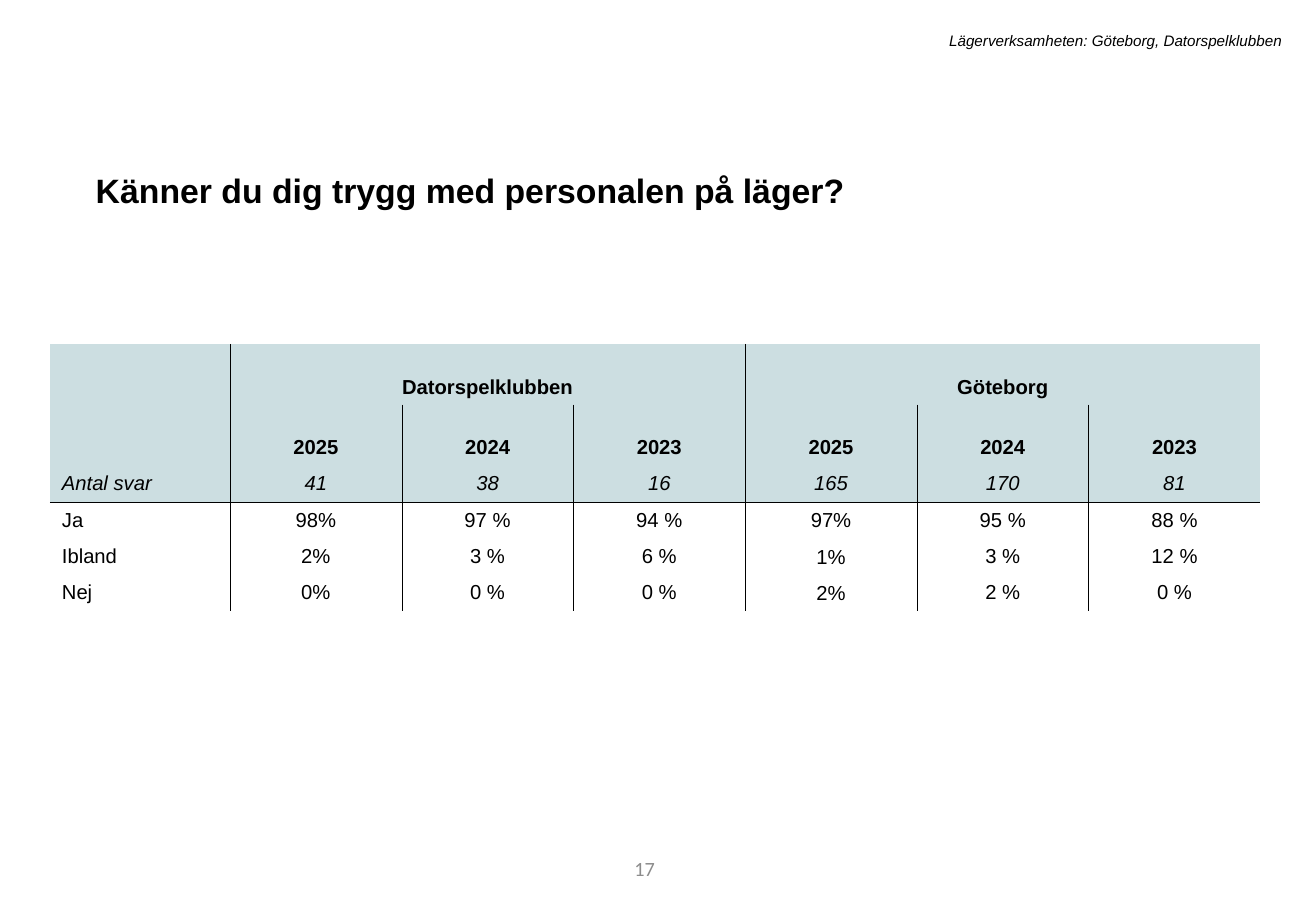
from dataclasses import dataclass

import pptx
import pptx.dml.color
import pptx.enum.text
import pptx.oxml
import pptx.oxml.ns
import pptx.slide
import pptx.table
import pptx.text.text
import pptx.util
from pptx.util import Pt

ALIGN = pptx.enum.text.PP_ALIGN
ANCHOR = pptx.enum.text.MSO_ANCHOR
AUTO_SIZE = pptx.enum.text.MSO_AUTO_SIZE

BLACK = "000000"
GREY = "8C8C8C"
HEADER_FILL = "CCDEE1"
BORDER_WIDTH = 0.25

YEARS = ["2025", "2024", "2023"]
GROUPS = ["Datorspelklubben", "Göteborg"]
ROWS = [
    ["", GROUPS[0], "", "", GROUPS[1], "", ""],
    ["", *YEARS, *YEARS],
    ["Antal svar", "41", "38", "16", "165", "170", "81"],
    ["Ja", "98%", "97 %", "94 %", "97%", "95 %", "88 %"],
    ["Ibland", "2%", "3 %", "6 %", "1%", "3 %", "12 %"],
    ["Nej", "0%", "0 %", "0 %", "2%", "2 %", "0 %"],
]
GROUP_STARTS = [1, 4]
COUNT_ROW = 2
ROW_HEIGHTS = [36, 36, 21.6, 21.6, 21.6, 21.6]
COLUMN_WIDTHS = [106.8] + [101.8] * 6


@dataclass
class Style:
    size: float
    font: str = "Arial"
    color: str = BLACK
    bold: bool = False
    italic: bool = False


@dataclass
class Label:
    text: str
    left: float
    top: float
    width: float
    height: float
    style: Style
    align: ALIGN = ALIGN.LEFT
    anchor: ANCHOR = ANCHOR.TOP
    fits_text: bool = True
    line_spacing: float = 1.0
    space_before: float = 0


LABELS = [
    Label("17", 219.6, 500.4, 175.7, 28.8, Style(12, "Calibri", GREY),
          ALIGN.RIGHT, ANCHOR.MIDDLE, fits_text=False),
    Label("Känner du dig trygg med personalen på läger?", 49.7, 92.2, 676.8, 33.8,
          Style(20, bold=True), line_spacing=1.2, space_before=10),
    Label("Lägerverksamheten: Göteborg, Datorspelklubben", 128.9, 15.1, 637.9, 18,
          Style(9, italic=True), ALIGN.RIGHT),
]


def rgb(color: str) -> pptx.dml.color.RGBColor:
    return pptx.dml.color.RGBColor.from_string(color)


def write(frame: pptx.text.text.TextFrame, text: str, style: Style, align: ALIGN):
    para = frame.paragraphs[0]
    para.alignment = align
    span = para.add_run()
    span.text = text
    span.font.size = Pt(style.size)
    span.font.name = style.font
    span.font.bold = style.bold
    span.font.italic = style.italic
    span.font.color.rgb = rgb(style.color)
    return para


def draw_label(page: pptx.slide.Slide, label: Label) -> None:
    box = page.shapes.add_textbox(
        Pt(label.left), Pt(label.top), Pt(label.width), Pt(label.height))
    frame = box.text_frame
    frame.word_wrap = True
    frame.vertical_anchor = label.anchor
    frame.auto_size = AUTO_SIZE.SHAPE_TO_FIT_TEXT if label.fits_text else AUTO_SIZE.NONE
    para = write(frame, label.text, label.style, label.align)
    para.line_spacing = label.line_spacing
    para.space_before = Pt(label.space_before)


def draw_borders(cell: pptx.table._Cell, row: int, column: int) -> None:
    dividers = GROUP_STARTS if row == 0 else range(1, len(COLUMN_WIDTHS))
    visible = {
        "lnL": column in dividers,
        "lnR": column + 1 in dividers,
        "lnT": row == COUNT_ROW + 1,
        "lnB": row == COUNT_ROW,
    }
    properties = cell._tc.get_or_add_tcPr()
    for side, shown in visible.items():
        paint = f'<a:solidFill><a:srgbClr val="{BLACK}"/></a:solidFill>' if shown else "<a:noFill/>"
        properties.append(pptx.oxml.parse_xml(
            f'<a:{side} {pptx.oxml.ns.nsdecls("a")} w="{Pt(BORDER_WIDTH)}">{paint}</a:{side}>'))


def draw_cell(cell: pptx.table._Cell, row: int, column: int) -> None:
    draw_borders(cell, row, column)
    if row <= COUNT_ROW:
        cell.fill.solid()
        cell.fill.fore_color.rgb = rgb(HEADER_FILL)
    else:
        cell.fill.background()
        if column == GROUP_STARTS[1]:
            cell.margin_left = cell.margin_top = cell.margin_right = Pt(0.7)
            cell.margin_bottom = Pt(0)
    is_heading = row < COUNT_ROW
    cell.vertical_anchor = ANCHOR.BOTTOM if is_heading else ANCHOR.MIDDLE
    if ROWS[row][column]:
        style = Style(12, bold=is_heading, italic=row == COUNT_ROW)
        align = ALIGN.CENTER if column else ALIGN.LEFT
        write(cell.text_frame, ROWS[row][column], style, align)


def draw_table(page: pptx.slide.Slide) -> None:
    table = page.shapes.add_table(
        len(ROW_HEIGHTS), len(COLUMN_WIDTHS), Pt(29.5), Pt(203.8),
        Pt(sum(COLUMN_WIDTHS)), Pt(sum(ROW_HEIGHTS))).table
    table.first_row = False
    table.horz_banding = False
    for column, width in zip(table.columns, COLUMN_WIDTHS):
        column.width = Pt(width)
    for row, height in zip(table.rows, ROW_HEIGHTS):
        row.height = Pt(height)
    for start in GROUP_STARTS:
        table.cell(0, start).merge(table.cell(0, start + len(YEARS) - 1))
    for row in range(len(ROW_HEIGHTS)):
        for column in range(len(COLUMN_WIDTHS)):
            draw_cell(table.cell(row, column), row, column)


def main() -> None:
    deck = pptx.Presentation()
    deck.slide_width = Pt(780)
    deck.slide_height = Pt(540)
    page = deck.slides.add_slide(deck.slide_layouts[6])
    draw_table(page)
    for label in LABELS:
        draw_label(page, label)
    deck.save("out.pptx")


if __name__ == "__main__":
    main()
